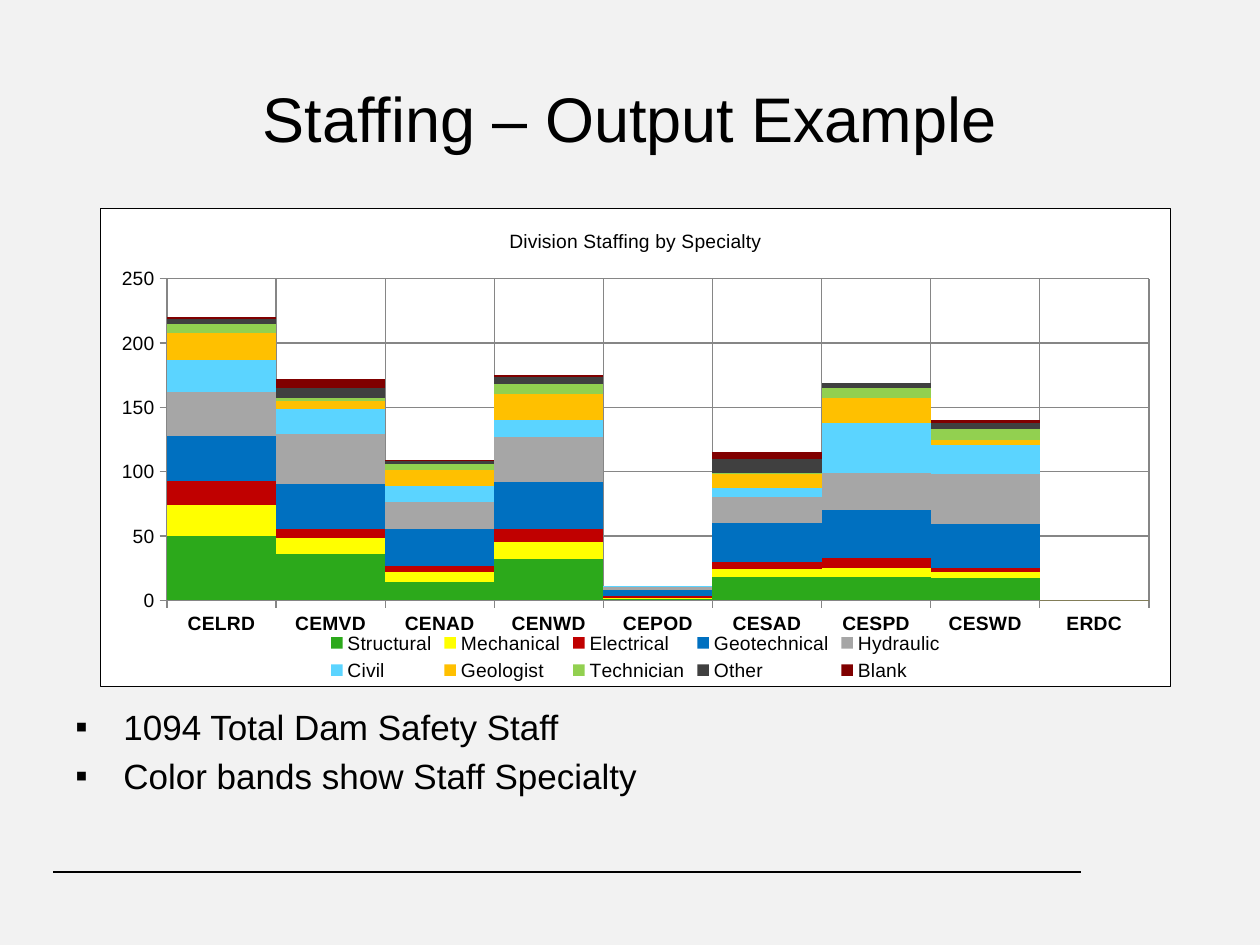
from dataclasses import dataclass

from lxml.etree import SubElement
from pptx import Presentation
from pptx.chart.data import CategoryChartData
from pptx.dml.color import RGBColor
from pptx.enum.chart import XL_CHART_TYPE, XL_LEGEND_POSITION, XL_TICK_MARK
from pptx.enum.shapes import MSO_CONNECTOR
from pptx.enum.text import MSO_ANCHOR, PP_ALIGN
from pptx.oxml import parse_xml
from pptx.oxml.ns import nsdecls, qn
from pptx.util import Emu, Pt

PX_PER_INCH = 126


@dataclass(frozen=True)
class Theme:
    font: str = "Arial"
    text: str = "000000"
    page: str = "F2F2F2"
    panel: str = "FFFFFF"
    grid: str = "868686"
    title_pt: int = 36
    body_pt: int = 20
    chart_pt: int = 11
    rule_pt: float = 0.75


THEME = Theme()

DIVISIONS = ["CELRD", "CEMVD", "CENAD", "CENWD", "CEPOD", "CESAD", "CESPD", "CESWD", "ERDC"]
SPECIALTIES = [
    ("Structural", "2CA91B", (50, 36, 14, 32, 1, 18, 18, 17, 0)),
    ("Mechanical", "FFFF00", (24, 12, 8, 13, 1, 6, 7, 5, 0)),
    ("Electrical", "C00000", (19, 7, 5, 10, 1, 6, 8, 3, 0)),
    ("Geotechnical", "0070C0", (35, 35, 28, 37, 5, 30, 37, 34, 0)),
    ("Hydraulic", "A6A6A6", (34, 39, 21, 35, 2, 20, 29, 39, 0)),
    ("Civil", "5BD4FF", (25, 20, 13, 13, 1, 7, 39, 23, 0)),
    ("Geologist", "FFC000", (21, 6, 12, 20, 0, 11, 19, 4, 0)),
    ("Technician", "92D050", (7, 2, 5, 8, 0, 1, 8, 8, 0)),
    ("Other", "404040", (4, 8, 2, 6, 0, 11, 4, 5, 0)),
    ("Blank", "800000", (1, 7, 1, 1, 0, 5, 0, 2, 0)),
]
BULLETS = ["1094 Total Dam Safety Staff", "Color bands show Staff Specialty"]


def px(n):
    return Emu(round(n * 914400 / PX_PER_INCH))


def rgb(color):
    return RGBColor.from_string(color)


def set_attrs(obj, **values):
    for name, value in values.items():
        setattr(obj, name, value)


def set_font(font, size, bold=False):
    set_attrs(font, name=THEME.font, size=Pt(size), bold=bold)
    font.color.rgb = rgb(THEME.text)


def set_line(line, color):
    line.color.rgb = rgb(color)
    line.width = Pt(THEME.rule_pt)


def add_footer_rule(slide, x, y, w):
    rule = slide.shapes.add_connector(
        MSO_CONNECTOR.STRAIGHT, px(x + w), px(y), px(x), px(y))
    set_line(rule.line, THEME.text)
    SubElement(rule._element.spPr, qn("a:effectLst"))


def set_title(slide, text, x, y, w, h):
    sp = slide.shapes.title
    set_attrs(sp, left=px(x), top=px(y), width=px(w), height=px(h))
    tf = sp.text_frame
    set_attrs(tf, text=text, vertical_anchor=MSO_ANCHOR.MIDDLE, word_wrap=True)
    p = tf.paragraphs[0]
    p.alignment = PP_ALIGN.CENTER
    set_font(p.runs[0].font, THEME.title_pt)


def set_plot_box(chart, x, y, w, h):
    """Fix the inner plot area, given as fractions of the chart."""
    area = chart._chartSpace.chart.plotArea
    for layout in area.findall(qn("c:layout")):
        area.remove(layout)
    sizes = "".join(f'<c:{tag} val="{v}"/>' for tag, v in zip("xywh", (x, y, w, h)))
    area.insert(0, parse_xml(
        f'<c:layout {nsdecls("c")}><c:manualLayout><c:layoutTarget val="inner"/>'
        f'<c:xMode val="edge"/><c:yMode val="edge"/>{sizes}'
        '</c:manualLayout></c:layout>'))


def set_chart_panel(chart):
    """Give the chart area its fill and border."""
    chart._chartSpace.chart.addnext(parse_xml(
        f'<c:spPr {nsdecls("c", "a")}>'
        f'<a:solidFill><a:srgbClr val="{THEME.panel}"/></a:solidFill>'
        f'<a:ln w="{Pt(THEME.rule_pt)}"><a:solidFill><a:srgbClr val="{THEME.text}"/>'
        '</a:solidFill></a:ln></c:spPr>'))


def add_staffing_chart(slide, x, y, w, h):
    data = CategoryChartData(number_format="0")
    data.categories = DIVISIONS
    for name, _, values in SPECIALTIES:
        data.add_series(name, values)
    chart = slide.shapes.add_chart(
        XL_CHART_TYPE.COLUMN_STACKED, px(x), px(y), px(w), px(h), data).chart
    set_font(chart.font, THEME.chart_pt)
    set_chart_panel(chart)
    set_plot_box(chart, 0.062, 0.147, 0.918, 0.673)

    chart.has_title = True
    tf = chart.chart_title.text_frame
    tf.text = "Division Staffing by Specialty"
    set_font(tf.paragraphs[0].runs[0].font, THEME.chart_pt)

    plot = chart.plots[0]
    set_attrs(plot, gap_width=0, overlap=100, vary_by_categories=False)
    for series, (_, color, _) in zip(plot.series, SPECIALTIES):
        series.format.fill.solid()
        series.format.fill.fore_color.rgb = rgb(color)

    for axis, bold in ((chart.category_axis, True), (chart.value_axis, False)):
        set_attrs(axis, has_major_gridlines=True, major_tick_mark=XL_TICK_MARK.CROSS)
        set_font(axis.tick_labels.font, THEME.chart_pt, bold)
        for line in (axis.format.line, axis.major_gridlines.format.line):
            set_line(line, THEME.grid)
    set_attrs(chart.value_axis, minimum_scale=0, maximum_scale=250, major_unit=50)

    chart.has_legend = True
    set_attrs(chart.legend, position=XL_LEGEND_POSITION.BOTTOM, include_in_layout=False)
    set_font(chart.legend.font, THEME.chart_pt)


def add_bullets(slide, items, x, y, w, h, indent=48):
    tf = slide.shapes.add_textbox(px(x), px(y), px(w), px(h)).text_frame
    tf.word_wrap = True
    for i, item in enumerate(items):
        p = tf.paragraphs[0] if i == 0 else tf.add_paragraph()
        pPr = p._p.get_or_add_pPr()
        pPr.set("marL", str(px(indent)))
        pPr.set("indent", str(-px(indent)))
        SubElement(pPr, qn("a:buFont"), typeface=THEME.font)
        SubElement(pPr, qn("a:buChar"), char="▪")
        if i:
            p.space_before = Pt(THEME.body_pt * 0.2)
        r = p.add_run()
        r.text = item
        set_font(r.font, THEME.body_pt)


def main():
    prs = Presentation()
    set_attrs(prs, slide_width=px(1260), slide_height=px(945))
    slide = prs.slides.add_slide(prs.slide_layouts.get_by_name("Title Only"))
    slide.background.fill.solid()
    slide.background.fill.fore_color.rgb = rgb(THEME.page)

    add_footer_rule(slide, 53, 872, 1028)
    set_title(slide, "Staffing – Output Example", 63, 38, 1134, 158)
    add_staffing_chart(slide, 100, 208, 1071, 479)
    add_bullets(slide, BULLETS, 63, 699, 1134, 180)
    prs.save("out.pptx")


if __name__ == "__main__":
    main()
